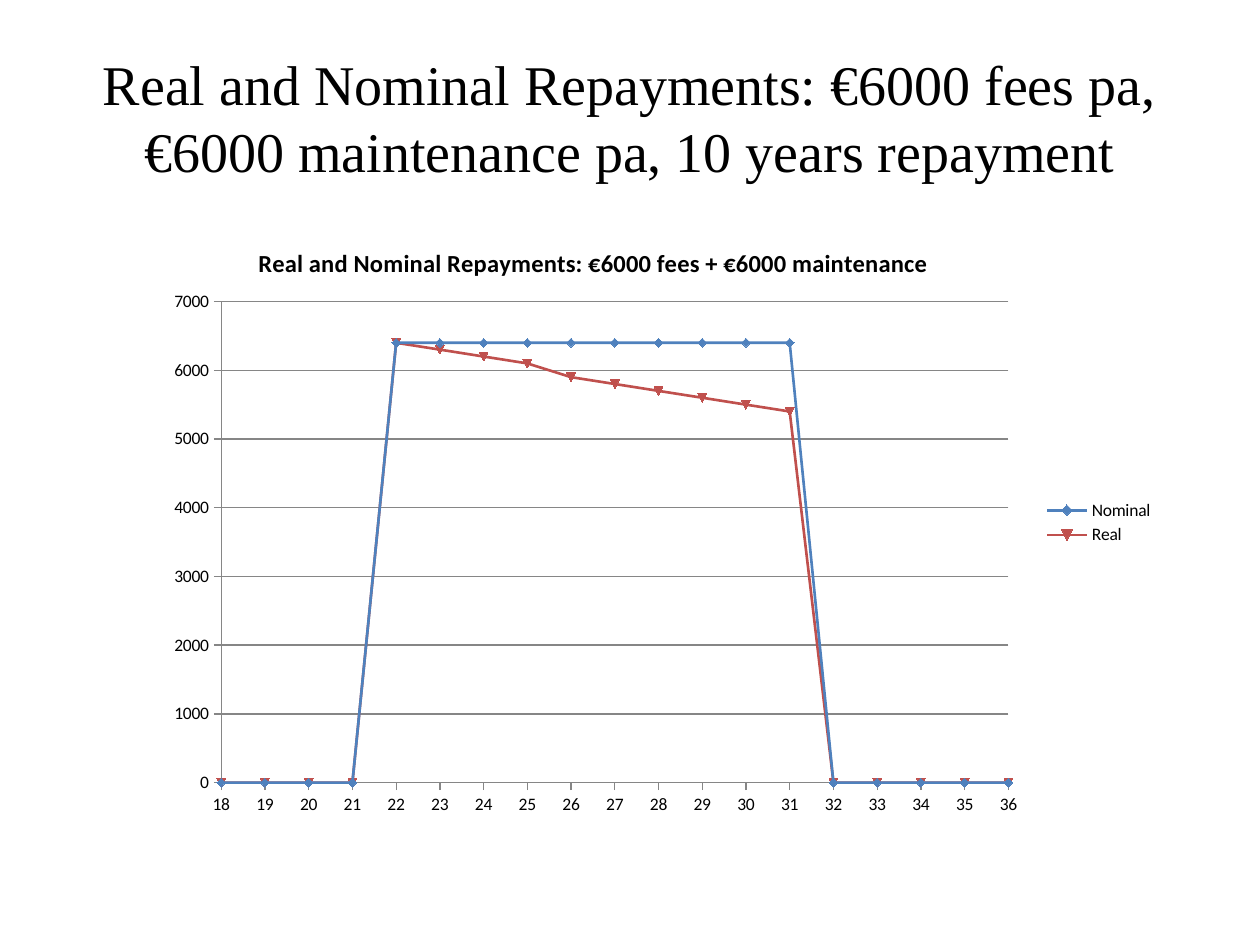
from lxml import etree
from pptx import Presentation
from pptx import util as u
from pptx.chart import data as chart_data
from pptx.dml import color
from pptx.enum import chart as ch
from pptx.enum import text
from pptx.oxml import ns

COLOURS = {"ink": "000000", "grid": "868686", "Nominal": "4F81BD", "Real": "C0504D"}
AGES = range(18, 37)
FIRST_PAYMENT = 22
REPAYMENTS = {
    "Nominal": [6400] * 10,
    "Real": [6400, 6300, 6200, 6100, 5900, 5800, 5700, 5600, 5500, 5400],
}


class RepaymentSlide:
    """Holds the style and the current slide, and adds each kind of element."""

    def __init__(self, deck):
        self.slide = deck.slides.add_slide(deck.slide_layouts[6])

    def rgb(self, name):
        return color.RGBColor.from_string(COLOURS[name])

    def style(self, font, face, size, bold=False):
        font.name, font.size, font.bold = face, u.Pt(size), bold
        font.color.rgb = self.rgb("ink")

    def stroke(self, line, name, width):
        line.color.rgb = self.rgb(name)
        line.width = u.Pt(width)

    def place(self, parent, successor, **position):
        layout = parent.find(ns.qn("c:layout"))
        if layout is None:
            layout = etree.Element(ns.qn("c:layout"))
            parent.find(ns.qn(successor)).addprevious(layout)
        manual = etree.SubElement(layout, ns.qn("c:manualLayout"))
        for tag, value in position.items():
            etree.SubElement(manual, ns.qn(f"c:{tag}")).set("val", str(value))

    def heading(self, wording, left, top, width, height):
        frame = self.slide.shapes.add_textbox(left, top, width, height).text_frame
        frame.word_wrap = True
        frame.vertical_anchor = text.MSO_ANCHOR.MIDDLE
        paragraph = frame.paragraphs[0]
        paragraph.alignment = text.PP_ALIGN.CENTER
        run = paragraph.add_run()
        run.text = wording
        self.style(run.font, "Times New Roman", 32)

    def axis(self, axis, low, high, step, gridlines):
        axis.minimum_scale, axis.maximum_scale, axis.major_unit = low, high, step
        axis.major_tick_mark = ch.XL_TICK_MARK.OUTSIDE
        axis.has_major_gridlines = gridlines
        self.stroke(axis.format.line, "grid", 0.75)
        if gridlines:
            self.stroke(axis.major_gridlines.format.line, "grid", 0.75)

    def scatter(self, caption, left, top, width, height):
        repayments = chart_data.XyChartData(number_format="General")
        for name, payments in REPAYMENTS.items():
            series = repayments.add_series(name)
            by_age = dict(enumerate(payments, FIRST_PAYMENT))
            for age in AGES:
                series.add_data_point(age, by_age.get(age, 0))
        chart = self.slide.shapes.add_chart(
            ch.XL_CHART_TYPE.XY_SCATTER_LINES, left, top, width, height, repayments
        ).chart
        self.style(chart.font, "Calibri", 10)

        chart.has_title = True
        run = chart.chart_title.text_frame.paragraphs[0].add_run()
        run.text = caption
        self.style(run.font, "Calibri", 14, bold=True)
        self.place(chart.chart_title._element, "c:overlay",
                   xMode="edge", yMode="edge",
                   x=u.Cm(2.02) / width, y=u.Cm(0.47) / height)

        chart.has_legend = True
        chart.legend.position = ch.XL_LEGEND_POSITION.RIGHT
        chart.legend.include_in_layout = False

        self.axis(chart.category_axis, AGES[0], AGES[-1], 1, gridlines=False)
        self.axis(chart.value_axis, 0, 7000, 1000, gridlines=True)
        plot = chart.plots[0]
        plot.vary_by_categories = False
        self.place(chart._chartSpace.chart.plotArea, "c:scatterChart",
                   layoutTarget="inner", xMode="edge", yMode="edge",
                   x=u.Cm(1.36) / width, y=u.Cm(1.68) / height,
                   w=u.Cm(15.87) / width, h=u.Cm(9.7) / height)

        for index, series in enumerate(plot.series, 1):
            series._element.find(ns.qn("c:idx")).set("val", str(index))
            series.smooth = False
            self.stroke(series.format.line, series.name, 1.5)
            series.marker.size = 5
            series.marker.format.fill.solid()
            series.marker.format.fill.fore_color.rgb = self.rgb(series.name)
            self.stroke(series.marker.format.line, series.name, 0.75)


def main():
    deck = Presentation()
    deck.slide_width, deck.slide_height = u.Cm(25.4), u.Cm(19.05)
    page = RepaymentSlide(deck)
    page.heading(
        "Real and Nominal Repayments: €6000 fees pa, "
        "€6000 maintenance pa, 10 years repayment",
        u.Cm(1.27), u.Cm(0.76), u.Cm(22.86), u.Cm(3.18),
    )
    page.scatter(
        "Real and Nominal Repayments: €6000 fees + €6000 maintenance",
        u.Cm(3.1), u.Cm(4.4), u.Cm(20.42), u.Cm(12.27),
    )
    deck.save("out.pptx")


if __name__ == "__main__":
    main()
